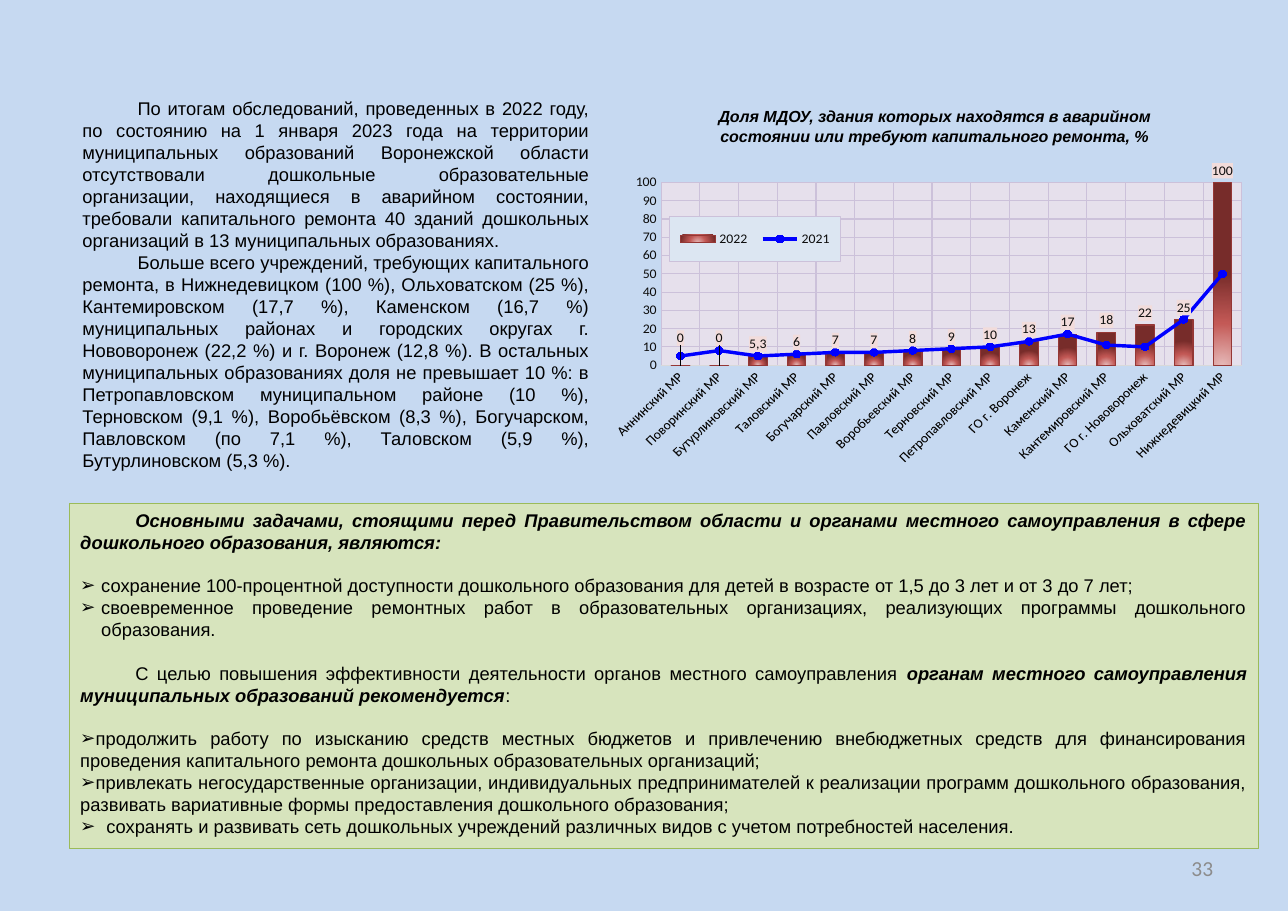
"""Build the slide on the condition of preschool buildings and the tasks ahead."""
from pptx import Presentation
from pptx import util as u
from pptx.chart.data import CategoryChartData
from pptx.dml.color import RGBColor
from pptx.enum import chart as charts, shapes, text
from pptx.oxml import parse_xml
from pptx.oxml.ns import nsdecls, qn

CAPTION = "Доля МДОУ, здания которых находятся в аварийном состоянии или требуют капитального ремонта, %"
PAGE_NUMBER = "33"
FINDINGS = [
    "По итогам обследований, проведенных в 2022 году, по состоянию на 1 января 2023 года на территории "
    "муниципальных образований Воронежской области отсутствовали дошкольные образовательные организации, "
    "находящиеся в аварийном состоянии, требовали капитального ремонта 40 зданий дошкольных организаций "
    "в 13 муниципальных образованиях.",
    "Больше всего учреждений, требующих капитального ремонта, в Нижнедевицком (100 %), Ольховатском (25 %), "
    "Кантемировском (17,7 %), Каменском (16,7 %) муниципальных районах и городских округах г. Нововоронеж "
    "(22,2 %) и г. Воронеж (12,8 %). В остальных муниципальных образованиях доля не превышает 10 %: "
    "в Петропавловском муниципальном районе (10 %), Терновском (9,1 %), Воробьёвском (8,3 %), Богучарском, "
    "Павловском (по 7,1 %), Таловском (5,9 %), Бутурлиновском (5,3 %).",
]
TASKS_LEAD = ("Основными задачами, стоящими перед Правительством области и органами местного "
              "самоуправления в сфере дошкольного образования, являются:")
TASKS = [
    "сохранение 100-процентной доступности дошкольного образования для детей в возрасте от 1,5 до 3 лет "
    "и от 3 до 7 лет;",
    "своевременное проведение ремонтных работ в образовательных организациях, реализующих программы "
    "дошкольного образования.",
]
ADVICE_LEAD = [
    ("С целью повышения эффективности деятельности органов местного самоуправления ", False),
    ("органам местного самоуправления муниципальных образований рекомендуется", True),
    (":", False),
]
ADVICE = [
    ("продолжить работу по изысканию средств местных бюджетов и привлечению внебюджетных средств для "
     "финансирования проведения капитального ремонта дошкольных образовательных организаций;", 0),
    ("привлекать негосударственные организации, индивидуальных предпринимателей к реализации программ "
     "дошкольного образования, развивать вариативные формы предоставления дошкольного образования;", 0),
    (" сохранять и развивать сеть дошкольных учреждений различных видов с учетом потребностей населения.", 0.19),
]
SHARES = [
    ("Аннинский МР", 0, 5), ("Поворинский МР", 0, 8), ("Бутурлиновский МР", 5, 5),
    ("Таловский МР", 6, 6), ("Богучарский МР", 7, 7), ("Павловский МР", 7, 7),
    ("Воробьевский МР", 8, 8), ("Терновский МР", 9, 9), ("Петропавловский МР", 10, 10),
    ("ГО г. Воронеж", 13, 13), ("Каменский МР", 17, 17), ("Кантемировский МР", 18, 11),
    ("ГО г. Нововоронеж", 22, 10), ("Ольховатский МР", 25, 25), ("Нижнедевицкий МР", 100, 50),
]
THEME = SimpleTheme = dict(
    back="C6D9F1", ink="000000", axis_ink="0D0D0D", number="8C8C8C", panel="D7E4BD", panel_line="9BBB59",
    plot="E6E0EC", grid="CCC1DA", axis="D9D9D9", bar_line="953735", line="0000FF", label="F2DCDB",
    legend="DCE6F2", gradient=[(0, "E6B9B8"), (46, "C35956"), (100, "772C2A")],
    body_font="Arial", chart_font="Calibri", body=12, caption=10.5, page=14, chart=10, small=9, gap=14,
)


def color(name):
    return RGBColor.from_string(THEME[name])


def style_font(font, size="body", ink="ink", face="body_font", strong=False):
    font.size, font.name = u.Pt(THEME[size]), THEME[face]
    font.bold = font.italic = strong
    font.color.rgb = color(ink)


def write(box, spans, align=text.PP_ALIGN.JUSTIFY, margin=0, indent=0, bullet=None, gap=0, **font):
    """Add one paragraph, given as a string or as (text, strong) pairs."""
    frame = box.text_frame
    para = frame.paragraphs[0] if not frame.text else frame.add_paragraph()
    para.alignment = align
    para.space_before = u.Pt(gap)
    props = para._p.get_or_add_pPr()
    props.set("marL", str(u.Inches(margin)))
    props.set("indent", str(u.Inches(indent)))
    if bullet:
        props.append(parse_xml(f'<a:buFont {nsdecls("a")} typeface="Arial"/>'))
        props.append(parse_xml(f'<a:buChar {nsdecls("a")} char="{bullet}"/>'))
    pairs = [(spans, font.pop("strong", False))] if isinstance(spans, str) else spans
    for words, strong in pairs:
        span = para.add_run()
        span.text = words
        style_font(span.font, strong=strong, **font)


def place(box, left, top, width, height, anchor=text.MSO_ANCHOR.TOP):
    box.left, box.top, box.width, box.height = map(u.Inches, (left, top, width, height))
    frame = box.text_frame
    frame.word_wrap, frame.vertical_anchor, frame.auto_size = True, anchor, text.MSO_AUTO_SIZE.NONE
    frame.margin_left = frame.margin_right = u.Inches(0.1)
    frame.margin_top = frame.margin_bottom = u.Inches(0.05)
    return box


def solid(name, line=None):
    edge = f'<a:ln w="9525"><a:solidFill><a:srgbClr val="{THEME[line]}"/></a:solidFill></a:ln>' if line else ""
    return parse_xml(f'<c:spPr {nsdecls("c", "a")}><a:solidFill><a:srgbClr val="{THEME[name]}"/>'
                     f'</a:solidFill>{edge}</c:spPr>')


def layout(target="", **edges):
    inner = f'<c:layoutTarget val="{target}"/>' if target else ""
    modes = "".join(f'<c:{key}Mode val="edge"/>' for key in "xy") if "w" in edges else ""
    sizes = "".join(f'<c:{key} val="{value}"/>' for key, value in edges.items())
    return parse_xml(f'<c:layout {nsdecls("c")}><c:manualLayout>{inner}{modes}{sizes}'
                     '</c:manualLayout></c:layout>')


def style_axis(axis):
    style_font(axis.tick_labels.font, "small", "axis_ink", "chart_font")
    axis.major_tick_mark = axis.minor_tick_mark = charts.XL_TICK_MARK.NONE
    axis.has_major_gridlines = True
    axis.major_gridlines.format.line.color.rgb = color("grid")
    axis.major_gridlines.format.line.width = u.Pt(0.75)


def label_bars(plot):
    plot_series = plot.series[0]
    labels = plot_series.data_labels
    labels.show_value = True
    labels.number_format, labels.number_format_is_linked = "#,##0", False
    labels.position = charts.XL_LABEL_POSITION.OUTSIDE_END
    style_font(labels.font, "small", "axis_ink", "chart_font")
    for index in range(3):
        label = plot_series.points[index].data_label
        if index == 2:
            span = label.text_frame.paragraphs[0].add_run()
            span.text = "5,3"
            style_font(span.font, "small", "axis_ink", "chart_font")
        style_font(label.font, "small", "axis_ink", "chart_font")
        label.position = charts.XL_LABEL_POSITION.OUTSIDE_END
    for node in plot_series._element.xpath("c:dLbls/c:dLbl")[:2]:
        node.find(qn("c:idx")).addnext(layout(x=0, y=-0.05))
    for props in plot_series._element.xpath("c:dLbls//c:txPr"):
        props.addprevious(solid("label"))


def split_line(chart):
    """Move the second series from the columns to a line plot on the same axes."""
    bars = chart._chartSpace.xpath("//c:barChart")[0]
    series = bars.findall(qn("c:ser"))[1]
    for node in series.findall(qn("c:invertIfNegative")):
        series.remove(node)
    lines = parse_xml(f'<c:lineChart {nsdecls("c")}><c:grouping val="standard"/><c:varyColors val="0"/>'
                      '<c:marker val="1"/></c:lineChart>')
    lines.insert(2, series)
    for axis in bars.findall(qn("c:axId")):
        lines.append(parse_xml(f'<c:axId {nsdecls("c")} val="{axis.get("val")}"/>'))
    bars.addnext(lines)
    trend = chart.plots[1].series[0]
    trend.smooth = False
    trend.format.line.color.rgb = color("line")
    trend.format.line.width = u.Pt(2.25)
    trend.marker.style, trend.marker.size = charts.XL_MARKER_STYLE.CIRCLE, 5
    for part in (trend.marker.format.fill, trend.marker.format.line.fill):
        part.solid()
        part.fore_color.rgb = color("line")


def add_shares_chart(page):
    data = CategoryChartData(number_format="General")
    names, current, previous = zip(*SHARES)
    data.categories = names
    data.add_series("2022", current)
    data.add_series("2021", previous)
    bounds = map(u.Inches, (4.98, 1.48, 6.46, 2.89))
    chart = page.shapes.add_chart(charts.XL_CHART_TYPE.COLUMN_CLUSTERED, *bounds, data).chart
    style_font(chart.font, "chart", "ink", "chart_font")
    chart.has_title = False
    bars = chart.plots[0]
    bars.gap_width, bars.vary_by_categories = 108, False
    split_line(chart)
    label_bars(bars)
    bar_format = bars.series[0].format
    bar_format.line.color.rgb, bar_format.line.width = color("bar_line"), u.Pt(0.75)
    stops = "".join(f'<a:gs pos="{at * 1000}"><a:srgbClr val="{tint}"/></a:gs>' for at, tint in THEME["gradient"])
    bars.series[0]._element.find(qn("c:spPr")).insert(0, parse_xml(
        f'<a:gradFill {nsdecls("a")}><a:gsLst>{stops}</a:gsLst><a:path path="circle">'
        '<a:fillToRect l="50000" t="130000" r="50000" b="-30000"/></a:path></a:gradFill>'))

    for axis in (chart.category_axis, chart.value_axis):
        style_axis(axis)
    chart.category_axis.format.line.color.rgb = color("axis")
    chart._chartSpace.xpath("//c:catAx/c:txPr/a:bodyPr")[0].set("rot", "-2700000")
    values = chart.value_axis
    values.minimum_scale, values.maximum_scale, values.major_unit = 0, 100, 10
    values.tick_labels.number_format, values.tick_labels.number_format_is_linked = "#,##0", False
    values.format.line.fill.background()

    area = chart._chartSpace.xpath("//c:plotArea")[0]
    for node in area.findall(qn("c:layout")):
        area.remove(node)
    area.insert(0, layout("inner", x=0.158, y=0.02, w=0.816, h=0.599))
    area.append(solid("plot"))
    chart.has_legend = True
    legend = chart.legend
    legend.position, legend.include_in_layout = charts.XL_LEGEND_POSITION.BOTTOM, False
    style_font(legend.font, "small", "axis_ink", "chart_font")
    node = legend._element
    for old in node.findall(qn("c:layout")):
        node.remove(old)
    node.find(qn("c:legendPos")).addnext(layout(x=0.17, y=0.13, w=0.24, h=0.15))
    node.find(qn("c:txPr")).addprevious(solid("legend", "grid"))


def main():
    deck = Presentation()
    deck.slide_width, deck.slide_height = u.Inches(11.69), u.Inches(8.27)
    page = deck.slides.add_slide(deck.slide_layouts[5])
    page.background.fill.solid()
    page.background.fill.fore_color.rgb = color("back")

    caption = place(page.shapes.title, 6.16, 0.92, 4.65, 0.45)
    write(caption, CAPTION, align=text.PP_ALIGN.CENTER, size="caption", strong=True)
    number = place(page.shapes.add_textbox(0, 0, 0, 0), 8.38, 7.66, 2.73, 0.44, text.MSO_ANCHOR.MIDDLE)
    write(number, PAGE_NUMBER, align=text.PP_ALIGN.RIGHT, size="page", ink="number", face="chart_font")
    add_shares_chart(page)
    findings = place(page.shapes.add_textbox(0, 0, 0, 0), 0.65, 0.83, 4.8, 3.74)
    for words in FINDINGS:
        write(findings, words, indent=0.5)

    panel = place(page.shapes.add_shape(shapes.MSO_SHAPE.RECTANGLE, 0, 0, 0, 0), 0.63, 4.57, 10.79, 3.13)
    panel.shadow.inherit = False
    panel.fill.solid()
    panel.fill.fore_color.rgb = color("panel")
    panel.line.color.rgb, panel.line.width = color("panel_line"), u.Pt(0.75)
    gap = THEME["gap"]
    write(panel, TASKS_LEAD, indent=0.5, strong=True)
    for index, words in enumerate(TASKS):
        write(panel, words, margin=0.19, indent=-0.19, bullet="➢", gap=0 if index else gap)
    write(panel, ADVICE_LEAD, indent=0.5, gap=gap)
    for index, (words, margin) in enumerate(ADVICE):
        write(panel, words, margin=margin, indent=-0.19, bullet="➢", gap=0 if index else gap)
    deck.save("out.pptx")


if __name__ == "__main__":
    main()
